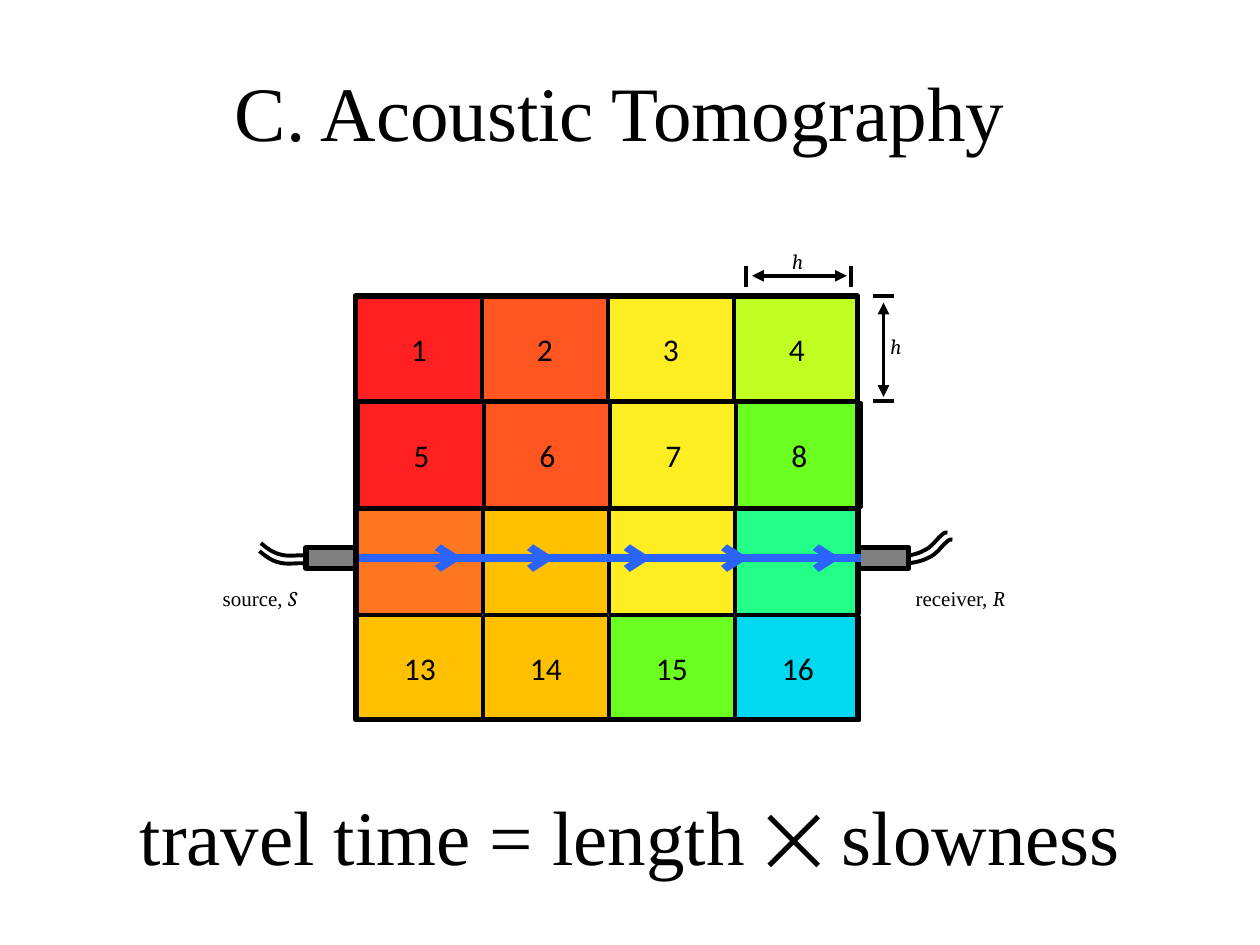
from dataclasses import dataclass

from lxml import etree
from pptx import Presentation
from pptx.dml.color import RGBColor
from pptx.enum.shapes import MSO_CONNECTOR, MSO_SHAPE
from pptx.enum.text import MSO_ANCHOR, PP_ALIGN
from pptx.oxml.ns import qn
from pptx.util import Cm, Pt

RECT = MSO_SHAPE.RECTANGLE
LINE = MSO_CONNECTOR.STRAIGHT
MIDDLE = MSO_ANCHOR.MIDDLE
TOP = MSO_ANCHOR.TOP
CENTER = PP_ALIGN.CENTER
LEFT = PP_ALIGN.LEFT
RIGHT_SIDE = 3


@dataclass(frozen=True)
class Theme:
    """Colours, fonts and sizes of the slide."""
    ink: str = "000000"
    ray: str = "2B63FF"
    probe: str = "808080"
    serif: str = "Times New Roman"
    sans: str = "Calibri"
    math: str = "Cambria"
    big: int = 44
    mid: int = 18
    small: int = 12
    thin: float = 1.5
    wire: float = 2.25
    thick: float = 3
    bold: float = 4.5


THEME = Theme()
ROWS = [
    (7.19, ["FF2121", "FF5621", "FDED23", "C0FF21"], True),
    (7.24, ["FF2121", "FF5621", "FDED23", "6BFF21"], True),
    (7.21, ["FF7621", "FFC000", "FDED23", "22FE86"], False),
    (7.21, ["FFC000", "FFC000", "6BFF21", "00D9F0"], True),
]
GRID_TOP, STEP_X, STEP_Y = 5.97, 2.54, 2.15
CELL_W, CELL_H = 2.51, 2.11
RAY_Y = 11.25
RAYS = [(7.24, 9.32), (9.09, 11.18), (11.05, 13.13), (13, 15.09), (14.4, 16.94)]
SOURCE_WIRE = [(5.26, 10.95), (5.38, 11.05), (5.51, 11.15), (5.66, 11.18),
               (5.82, 11.23), (6.05, 11.18), (6.15, 11.2),
               (6.25, 11.2), (6.25, 11.23), (6.25, 11.25)]
RECEIVER_WIRE = [(18.16, 11.23), (18.31, 11.2), (18.49, 11.18), (18.62, 11.1),
                 (18.77, 11.05), (18.9, 10.85), (18.97, 10.8),
                 (19.05, 10.72), (19.07, 10.74), (19.1, 10.74)]


def color(code):
    """Turn a hex code into a colour."""
    return RGBColor.from_string(code)


def style(run, size, font, italic=False):
    """Format one run."""
    run.font.size = Pt(size)
    run.font.name = font
    run.font.italic = italic
    run.font.color.rgb = color(THEME.ink)


def stroke(shape, width, code=THEME.ink):
    """Set the outline of a shape."""
    shape.line.color.rgb = color(code)
    shape.line.width = Pt(width)


def add_box(slide, x, y, w, h, width, fill=None, text=""):
    """Draw an outlined rectangle, filled and numbered if asked."""
    box = slide.shapes.add_shape(RECT, Cm(x), Cm(y), Cm(w), Cm(h))
    box.shadow.inherit = False
    stroke(box, width)
    if fill:
        box.fill.solid()
        box.fill.fore_color.rgb = color(fill)
    else:
        box.fill.background()
    if text:
        frame = box.text_frame
        frame.text = text
        frame.vertical_anchor = MIDDLE
        para = frame.paragraphs[0]
        para.alignment = CENTER
        style(para.runs[0], THEME.mid, THEME.sans)
    return box


def add_text(slide, x, y, w, h, parts, size, wide=False):
    """Write one line made of (text, font, italic) parts."""
    frame = slide.shapes.add_textbox(Cm(x), Cm(y), Cm(w), Cm(h)).text_frame
    frame.word_wrap = wide
    frame.vertical_anchor = MIDDLE if wide else TOP
    para = frame.paragraphs[0]
    para.alignment = CENTER if wide else LEFT
    for text, font, italic in parts:
        run = para.add_run()
        run.text = text
        style(run, size, font, italic)


def add_line(slide, start, end, width, code=THEME.ink, head=None, tail=None):
    """Draw a straight line with optional arrowheads."""
    line = slide.shapes.add_connector(
        LINE, Cm(start[0]), Cm(start[1]), Cm(end[0]), Cm(end[1]))
    stroke(line, width, code)
    props = line.line._get_or_add_ln()
    for tag, kind in (("a:headEnd", head), ("a:tailEnd", tail)):
        if kind:
            etree.SubElement(props, qn(tag)).set("type", kind)
    etree.SubElement(line._element.spPr, qn("a:effectLst"))
    return line


def curve(points, steps=10):
    """Sample a chain of cubic curves."""
    result = [points[0]]
    for i in range(0, len(points) - 1, 3):
        for n in range(1, steps + 1):
            t = n / steps
            u = 1 - t
            parts = (u ** 3, 3 * u * u * t, 3 * u * t * t, t ** 3)
            result.append(tuple(
                sum(part * point[axis] for part, point in zip(parts, points[i:i + 4]))
                for axis in (0, 1)))
    return result


def add_wires(slide, points, shift):
    """Draw a pair of equal wires, the second one shifted."""
    for n in range(2):
        dots = [(Cm(x + n * shift[0]), Cm(y + n * shift[1])) for x, y in curve(points)]
        path = slide.shapes.build_freeform(*dots[0])
        path.add_line_segments(dots[1:], close=False)
        wire = path.convert_to_shape()
        wire.shadow.inherit = False
        wire.fill.background()
        stroke(wire, THEME.wire)


def add_grid(slide):
    """Draw the coloured cells and their frame."""
    for row, (left, fills, shown) in enumerate(ROWS):
        for col, fill in enumerate(fills):
            text = str(row * len(fills) + col + 1) if shown else ""
            add_box(slide, left + col * STEP_X, GRID_TOP + row * STEP_Y,
                    CELL_W, CELL_H, THEME.thin, fill, text)
    add_box(slide, 7.16, GRID_TOP, 10.13, 8.53, THEME.thick)


def add_rays(slide, source):
    """Draw the ray from the source to the receiver."""
    for n, (start, end) in enumerate(RAYS):
        ray = add_line(slide, (start, RAY_Y), (end, RAY_Y),
                       THEME.bold, THEME.ray, tail="arrow")
        if n == 0:
            ray.begin_connect(source, RIGHT_SIDE)
    add_line(slide, (16.71, RAY_Y), (17.35, RAY_Y), THEME.bold, THEME.ray)


def add_span(slide, start, end, ticks, label):
    """Draw a dimension arrow with end ticks and its letter."""
    add_line(slide, start, end, THEME.wire, head="triangle", tail="triangle")
    for tick in ticks:
        add_line(slide, *tick, THEME.wire)
    add_text(slide, *label, 0.64, 0.76, [("h", THEME.math, True)], THEME.small)


def main():
    """Build and save the slide."""
    deck = Presentation()
    deck.slide_width, deck.slide_height = Cm(25.4), Cm(19.05)
    slide = deck.slides.add_slide(deck.slide_layouts[6])
    add_text(slide, 1.07, 0.64, 22.86, 3.18,
             [("C. Acoustic Tomography", THEME.serif, False)], THEME.big, True)
    add_wires(slide, SOURCE_WIRE, (-0.03, 0.16))
    add_wires(slide, RECEIVER_WIRE, (0.1, 0.14))
    _, source = [add_box(slide, x, RAY_Y - 0.21, 1.07, 0.42, THEME.thick, THEME.probe)
                 for x in (17.25, 6.17)]
    add_grid(slide)
    add_rays(slide, source)
    add_span(slide, (17.81, 6.1), (17.81, 8),
             [((17.6, y), (18.03, y)) for y in (5.97, 8.08)], (17.7, 6.6))
    add_span(slide, (15.16, 5.56), (17.07, 5.56),
             [((x, 5.79), (x, 5.36)) for x in (15.04, 17.15)], (15.72, 4.88))
    for x, w, name, sign in ((4.24, 2.34, "source, ", "S"), (18.21, 2.74, "receiver, ", "R")):
        add_text(slide, x, 11.68, w, 0.76,
                 [(name, THEME.serif, False), (sign, THEME.math, True)], THEME.small)
    add_text(slide, 1.27, 15.24, 22.86, 3.18,
             [("travel time = length ", THEME.serif, False), ("⨉", THEME.math, False),
              (" slowness", THEME.serif, False)], THEME.big, True)
    deck.save("out.pptx")


if __name__ == "__main__":
    main()
